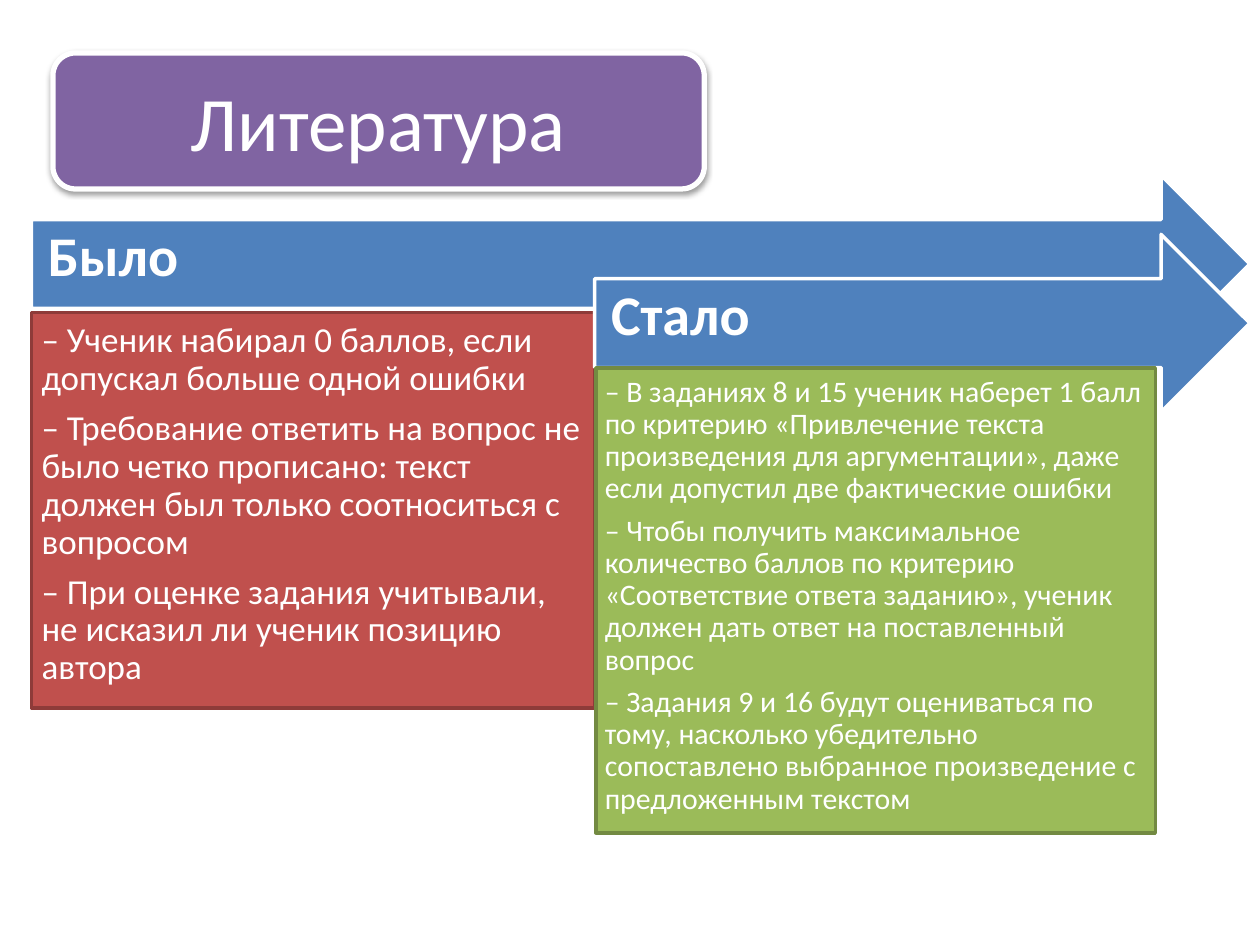
from lxml import etree
from pptx import Presentation
from pptx.dml.color import RGBColor
from pptx.enum.shapes import MSO_SHAPE
from pptx.enum.text import MSO_ANCHOR, PP_ALIGN
from pptx.oxml.ns import qn
from pptx.util import Inches, Pt

ARROW = MSO_SHAPE.RIGHT_ARROW
RECTANGLE = MSO_SHAPE.RECTANGLE
ROUNDED = MSO_SHAPE.ROUNDED_RECTANGLE
TOP, MIDDLE = MSO_ANCHOR.TOP, MSO_ANCHOR.MIDDLE
LEFT, CENTER = PP_ALIGN.LEFT, PP_ALIGN.CENTER

WHITE = RGBColor(0xFF, 0xFF, 0xFF)
BLUE = RGBColor(0x4F, 0x81, 0xBD)
RED = RGBColor(0xC0, 0x50, 0x4D)
DARK_RED = RGBColor(0x8E, 0x3B, 0x39)
GREEN = RGBColor(0x9B, 0xBB, 0x59)
DARK_GREEN = RGBColor(0x73, 0x8A, 0x42)
PURPLE = RGBColor(0x80, 0x64, 0xA2)

BEFORE = [
    "– Ученик набирал 0 баллов, если допускал больше одной ошибки",
    "– Требование ответить на вопрос не было четко прописано: текст должен был только соотноситься с вопросом",
    "– При оценке задания учитывали, не исказил ли ученик позицию автора",
]
AFTER = [
    "– В заданиях 8 и 15 ученик наберет 1 балл по критерию «Привлечение текста произведения для аргументации», даже если допустил две фактические ошибки",
    "– Чтобы получить максимальное количество баллов по критерию «Соответствие ответа заданию», ученик должен дать ответ на поставленный вопрос",
    "– Задания 9 и 16 будут оцениваться по тому, насколько убедительно сопоставлено выбранное произведение с предложенным текстом",
]

deck = Presentation()
deck.slide_width, deck.slide_height = Inches(10), Inches(7.5)
page = deck.slides.add_slide(deck.slide_layouts[6])


def add_box(kind, place, fill, line, width, insets, anchor):
    box = page.shapes.add_shape(kind, *[Inches(length) for length in place])
    box.shadow.inherit = False
    box.fill.solid()
    box.fill.fore_color.rgb = fill
    box.line.color.rgb = line
    box.line.width = Pt(width)
    frame = box.text_frame
    frame.word_wrap = True
    frame.vertical_anchor = anchor
    frame.margin_left, frame.margin_top, frame.margin_right, frame.margin_bottom = [
        Inches(inset) for inset in insets
    ]
    return box


def write(box, texts, size, bold=False, align=LEFT, spacing=0.9, gap=0.35):
    frame = box.text_frame
    for index, text in enumerate(texts):
        para = frame.paragraphs[0] if index == 0 else frame.add_paragraph()
        para.text = text
        para.alignment = align
        para.line_spacing = spacing
        para.space_after = Pt(size * gap)
        para.font.name = "Calibri"
        para.font.size = Pt(size)
        para.font.bold = bold
        para.font.color.rgb = WHITE


stages = [
    ("Было", (0.25, 1.39, 9.67, 1.41), BEFORE, (0.25, 2.48, 4.47, 3.14), RED, DARK_RED, 20, 0.08),
    ("Стало", (4.72, 1.86, 5.2, 1.41), AFTER, (4.73, 2.92, 4.44, 3.69), GREEN, DARK_GREEN, 17, 0.07),
]
for heading, arrow_place, points, panel_place, fill, line, size, inset in stages:
    arrow = add_box(ARROW, arrow_place, BLUE, WHITE, 2, (0.13, 0.13, 0.28, 0.22), MIDDLE)
    write(arrow, [heading], 32, bold=True)
    panel = add_box(RECTANGLE, panel_place, fill, line, 2, [inset] * 4, TOP)
    write(panel, points, size)

title = add_box(ROUNDED, (0.42, 0.42, 5.17, 1.08), PURPLE, WHITE, 3, (0.1, 0.05, 0.1, 0.05), MIDDLE)
write(title, ["Литература"], 44, align=CENTER, spacing=1.0, gap=0)
effects = title.element.spPr.find(qn("a:effectLst"))
shadow = etree.SubElement(
    effects, qn("a:outerShdw"),
    blurRad=str(Pt(3.1)), dist=str(Pt(1.6)), dir="5400000", rotWithShape="0",
)
shade = etree.SubElement(shadow, qn("a:srgbClr"), val="000000")
etree.SubElement(shade, qn("a:alpha"), val="38000")

deck.save("out.pptx")
